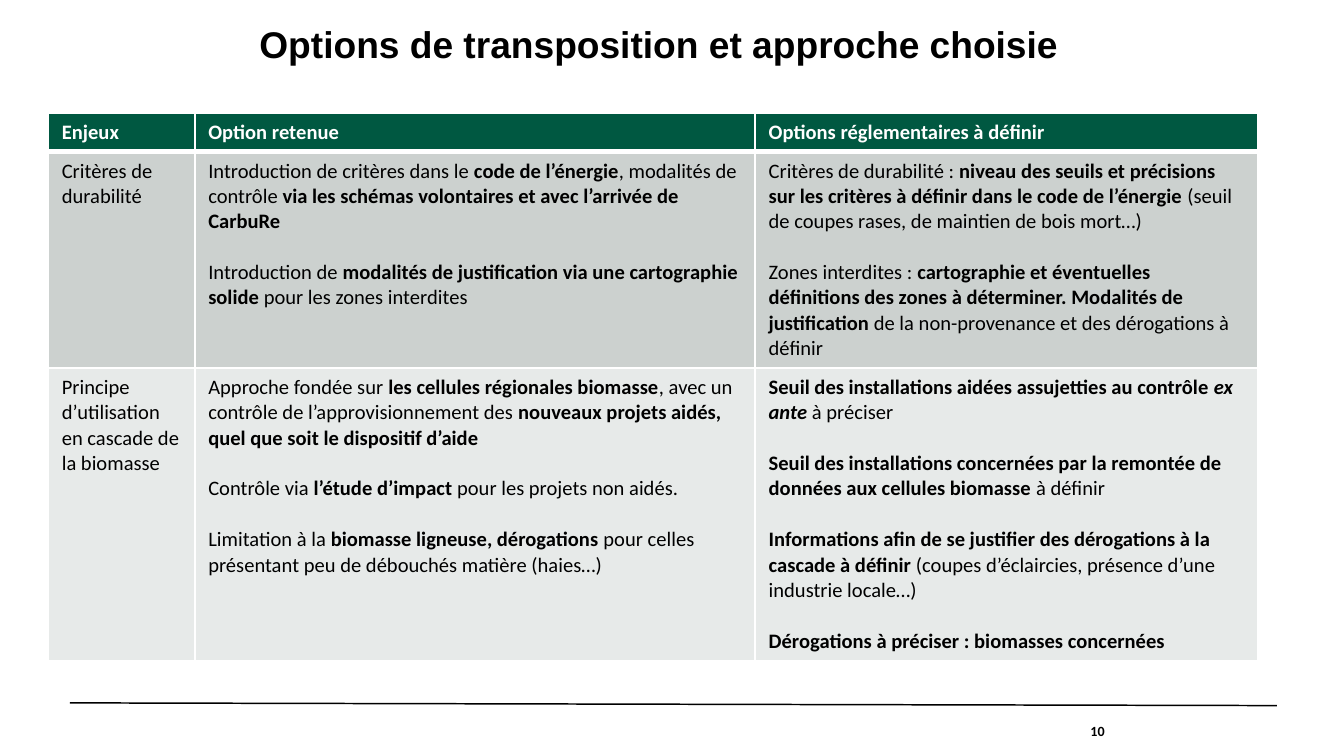
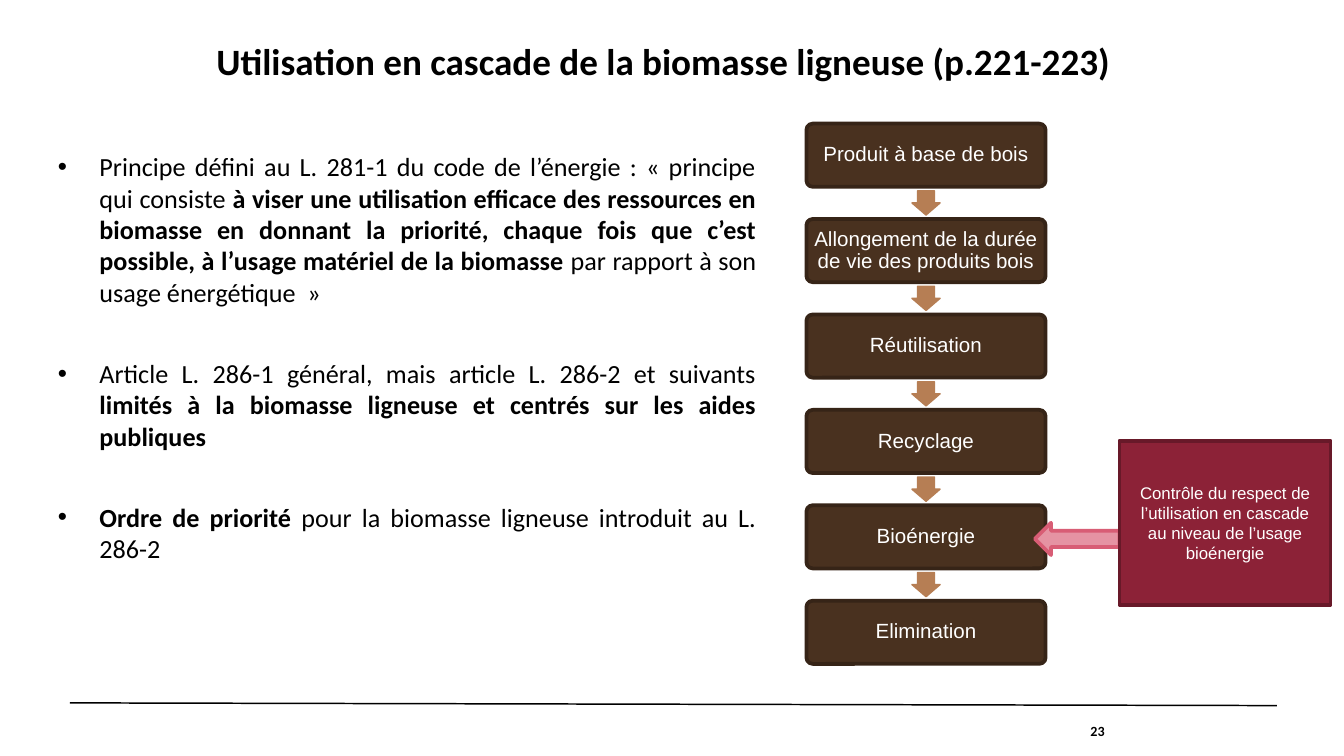
from lxml import etree
from pptx import Presentation
from pptx.dml.color import RGBColor
from pptx.enum.shapes import MSO_CONNECTOR, MSO_SHAPE
from pptx.enum.text import MSO_ANCHOR, MSO_AUTO_SIZE, PP_ALIGN
from pptx.oxml.ns import qn
from pptx.util import Inches, Pt

LEFT, CENTER, RIGHT, JUSTIFY = PP_ALIGN.LEFT, PP_ALIGN.CENTER, PP_ALIGN.RIGHT, PP_ALIGN.JUSTIFY
TOP, MIDDLE = MSO_ANCHOR.TOP, MSO_ANCHOR.MIDDLE
BOX, RECT, ARROW = MSO_SHAPE.ROUNDED_RECTANGLE, MSO_SHAPE.RECTANGLE, MSO_SHAPE.RIGHT_ARROW

BLACK = RGBColor(0x00, 0x00, 0x00)
WHITE = RGBColor(0xFF, 0xFF, 0xFF)
GREEN = RGBColor(0x00, 0x58, 0x41)
GREY = RGBColor(0xCC, 0xD1, 0xCF)
LIGHT_GREY = RGBColor(0xE7, 0xEA, 0xE9)
BROWN = RGBColor(0x49, 0x31, 0x1F)
DARK_BROWN = RGBColor(0x36, 0x24, 0x17)
TAN = RGBColor(0xB6, 0x7E, 0x54)
PINK = RGBColor(0xE5, 0x93, 0xA3)
DARK_PINK = RGBColor(0xD8, 0x5D, 0x75)
WINE = RGBColor(0x8C, 0x22, 0x37)
DARK_WINE = RGBColor(0x68, 0x19, 0x29)

# In the texts, *...* is bold and _..._ is italic.
OPTIONS_TITLE = "Options de transposition et approche choisie"
OPTIONS_ROWS = [
    [["Enjeux"], ["Option retenue"], ["Options réglementaires à définir"]],
    [
        ["Critères de durabilité"],
        ["Introduction de critères dans le *code de l’énergie*, modalités de contrôle "
         "*via les schémas volontaires et avec l’arrivée de CarbuRe*",
         "Introduction de *modalités de justification via une cartographie solide* "
         "pour les zones interdites"],
        ["Critères de durabilité : *niveau des seuils et précisions sur les critères à définir "
         "dans le code de l’énergie *(seuil de coupes rases, de maintien de bois mort…)",
         "Zones interdites : *cartographie et éventuelles définitions des zones à déterminer. "
         "Modalités de justification *de la non-provenance et des dérogations à définir"],
    ],
    [
        ["Principe d’utilisation en cascade de la biomasse"],
        ["Approche fondée sur *les cellules régionales biomasse*, avec un contrôle de "
         "l’approvisionnement des *nouveaux projets aidés, quel que soit le dispositif d’aide*",
         "Contrôle via *l’étude d’impact *pour les projets non aidés.",
         "Limitation à la *biomasse ligneuse, dérogations *pour celles présentant peu de "
         "débouchés matière (haies…)"],
        ["*Seuil des installations aidées assujetties au contrôle _ex ante _*à préciser",
         "*Seuil des installations concernées par la remontée de données aux cellules "
         "biomasse *à définir",
         "*Informations afin de se justifier des dérogations à la cascade à définir *"
         "(coupes d’éclaircies, présence d’une industrie locale…)",
         "*Dérogations à préciser : biomasses concernées*"],
    ],
]
COLUMN_WIDTHS = [1.09, 4.17, 3.74]
ROW_HEIGHTS = [0.28, 1.61, 2.17]
ROW_FILLS = [GREEN, GREY, LIGHT_GREY]

CASCADE_TITLE = "Utilisation en cascade de la biomasse ligneuse (p.221-223)"
CASCADE_POINTS = [
    "Principe défini au L. 281-1 du code de l’énergie : « principe qui consiste *à viser une "
    "utilisation efficace des ressources en biomasse en donnant la priorité, chaque fois que "
    "c’est possible, à l’usage matériel de la biomasse *par rapport à son usage énergétique  »",
    "Article L. 286-1 général, mais article L. 286-2 et suivants *limités à la biomasse "
    "ligneuse et centrés sur les aides publiques*",
    "*Ordre de priorité *pour la biomasse ligneuse introduit au L. 286-2",
]
CASCADE_STEPS = ["Produit à base de bois", "Allongement de la durée de vie des produits bois",
                 "Réutilisation", "Recyclage", "Bioénergie", "Elimination"]
CONTROL_NOTE = ("Contrôle du respect de l’utilisation en cascade "
                "au niveau de l’usage bioénergie")


def style(p, size, color=BLACK, font="Calibri", align=LEFT, bold=None):
    p.alignment = align
    p.font.size, p.font.name, p.font.bold = Pt(size), font, bold
    p.font.color.rgb = color


def add_runs(p, text):
    """Split marked text into runs: * toggles bold, _ toggles italic."""
    for i, part in enumerate(text.split("*")):
        for j, piece in enumerate(part.split("_")):
            if piece:
                r = p.add_run()
                r.text = piece
                if i % 2:
                    r.font.bold = True
                if j % 2:
                    r.font.italic = True


def fill_paragraphs(tf, texts, gap):
    """Write one paragraph per text, gap points apart, and return them."""
    for i, text in enumerate(texts):
        p = tf.add_paragraph() if i else tf.paragraphs[0]
        add_runs(p, text)
        p.space_before = Pt(gap if i else 0)
    return tf.paragraphs


def set_frame(tf, anchor, inset=0):
    tf.word_wrap, tf.auto_size, tf.vertical_anchor = True, MSO_AUTO_SIZE.NONE, anchor
    tf.margin_left = tf.margin_right = tf.margin_top = tf.margin_bottom = Inches(inset)


def place(sp, left, top, width, height):
    sp.left, sp.top, sp.width, sp.height = map(Inches, (left, top, width, height))


def add_slide(prs, layout, title, title_box, title_font, number):
    """Add a slide with its title, footer line and page number."""
    s = prs.slides.add_slide(prs.slide_layouts[layout])
    place(s.shapes.title, *title_box)
    tf = s.shapes.title.text_frame
    set_frame(tf, TOP)
    p = tf.paragraphs[0]
    p.text, p.line_spacing = title, 0.9
    style(p, 19.9, font=title_font, bold=True)

    line = s.shapes.add_connector(MSO_CONNECTOR.STRAIGHT, Inches(0.52), Inches(5.23),
                                  Inches(9.5), Inches(5.25))
    line.line.color.rgb, line.line.width = BLACK, Pt(0.8)
    etree.SubElement(line._element.spPr, qn("a:effectLst"))

    page = s.shapes.add_textbox(Inches(6.74), Inches(5.25), Inches(1.48), Inches(0.38))
    set_frame(page.text_frame, MIDDLE)
    p = page.text_frame.paragraphs[0]
    p.text = number
    style(p, 7.5, align=RIGHT, bold=True)
    return s


def add_block(s, kind, box, fill, outline, weight):
    sp = s.shapes.add_shape(kind, *map(Inches, box))
    sp.shadow.inherit = False
    sp.fill.solid()
    sp.fill.fore_color.rgb = fill
    sp.line.color.rgb, sp.line.width = outline, Pt(weight)
    return sp


def add_arrow(s, box, rotation, shaft, fill, outline, weight):
    sp = add_block(s, ARROW, box, fill, outline, weight)
    sp.rotation = rotation
    sp.adjustments[0], sp.adjustments[1] = shaft, 0.5


def label(sp, text, size, inset):
    set_frame(sp.text_frame, MIDDLE, inset)
    p = sp.text_frame.paragraphs[0]
    p.text = text
    style(p, size, WHITE, "Arial", CENTER)
    return p


def set_borders(cell, bottom):
    """White cell borders of 1 pt, with its own weight at the bottom."""
    tc_pr = cell._tc.get_or_add_tcPr()
    for i, (side, weight) in enumerate([("L", 1), ("R", 1), ("T", 1), ("B", bottom)]):
        ln = etree.Element(qn("a:ln" + side), w=str(Pt(weight)))
        solid = etree.SubElement(ln, qn("a:solidFill"))
        etree.SubElement(solid, qn("a:srgbClr"), val=str(WHITE))
        tc_pr.insert(i, ln)


def build_options(prs):
    s = add_slide(prs, 5, OPTIONS_TITLE, (1.93, 0.2, 8, 0.39), "Arial", "10")
    frame = s.shapes.add_table(len(OPTIONS_ROWS), len(COLUMN_WIDTHS), Inches(0.36), Inches(0.84),
                               Inches(sum(COLUMN_WIDTHS)), Inches(sum(ROW_HEIGHTS)))
    table = frame.table
    table.horz_banding = False
    for column, width in zip(table.columns, COLUMN_WIDTHS):
        column.width = Inches(width)
    for i, (row, height) in enumerate(zip(table.rows, ROW_HEIGHTS)):
        row.height = Inches(height)
        header = i == 0
        for cell, texts in zip(row.cells, OPTIONS_ROWS[i]):
            cell.fill.solid()
            cell.fill.fore_color.rgb = ROW_FILLS[i]
            set_borders(cell, 3 if header else 1)
            for p in fill_paragraphs(cell.text_frame, texts, 13.6):
                style(p, 11, WHITE if header else BLACK, bold=header)


def build_cascade(prs):
    s = add_slide(prs, 1, CASCADE_TITLE, (1.61, 0.32, 7.87, 0.39), "Calibri", "23")
    body = s.placeholders[1]
    place(body, 0.43, 0.82, 5.2, 2.94)
    tf = body.text_frame
    set_frame(tf, TOP)
    tf.margin_top = Inches(0.3)
    for p in fill_paragraphs(tf, CASCADE_POINTS, 26.7):
        p_pr = p._p.get_or_add_pPr()
        p_pr.set("marL", str(Inches(0.31)))
        p_pr.set("indent", str(-Inches(0.31)))
        etree.SubElement(p_pr, qn("a:buFont"), typeface="Arial")
        etree.SubElement(p_pr, qn("a:buChar"), char="•")
        style(p, 14, align=JUSTIFY)

    left, first_top, width, height, pitch = 6, 0.92, 1.78, 0.47, 0.71
    arrow_w, arrow_h = 0.18, 0.21
    for i, step in enumerate(CASCADE_STEPS):
        top = first_top + i * pitch
        if i:
            gap_middle = top - (pitch - height) / 2
            add_arrow(s, (left + (width - arrow_w) / 2, gap_middle - arrow_h / 2,
                          arrow_w, arrow_h), 90, 0.6, TAN, TAN, 0.75)
        sp = add_block(s, BOX, (left, top, width, height), BROWN, DARK_BROWN, 2)
        sp.adjustments[0] = 0.1
        label(sp, step, 11, 0.03).line_spacing = 0.9

    add_arrow(s, (7.7, 3.89, 0.63, 0.24), 180, 0.5, PINK, DARK_PINK, 2)
    label(add_block(s, RECT, (8.33, 3.28, 1.57, 1.22), WINE, DARK_WINE, 2),
          CONTROL_NOTE, 9, 0.1)


def main():
    prs = Presentation()
    prs.slide_width = Inches(10)
    prs.slide_height = prs.slide_width * 9 // 16
    build_options(prs)
    build_cascade(prs)
    prs.save("out.pptx")


if __name__ == "__main__":
    main()
